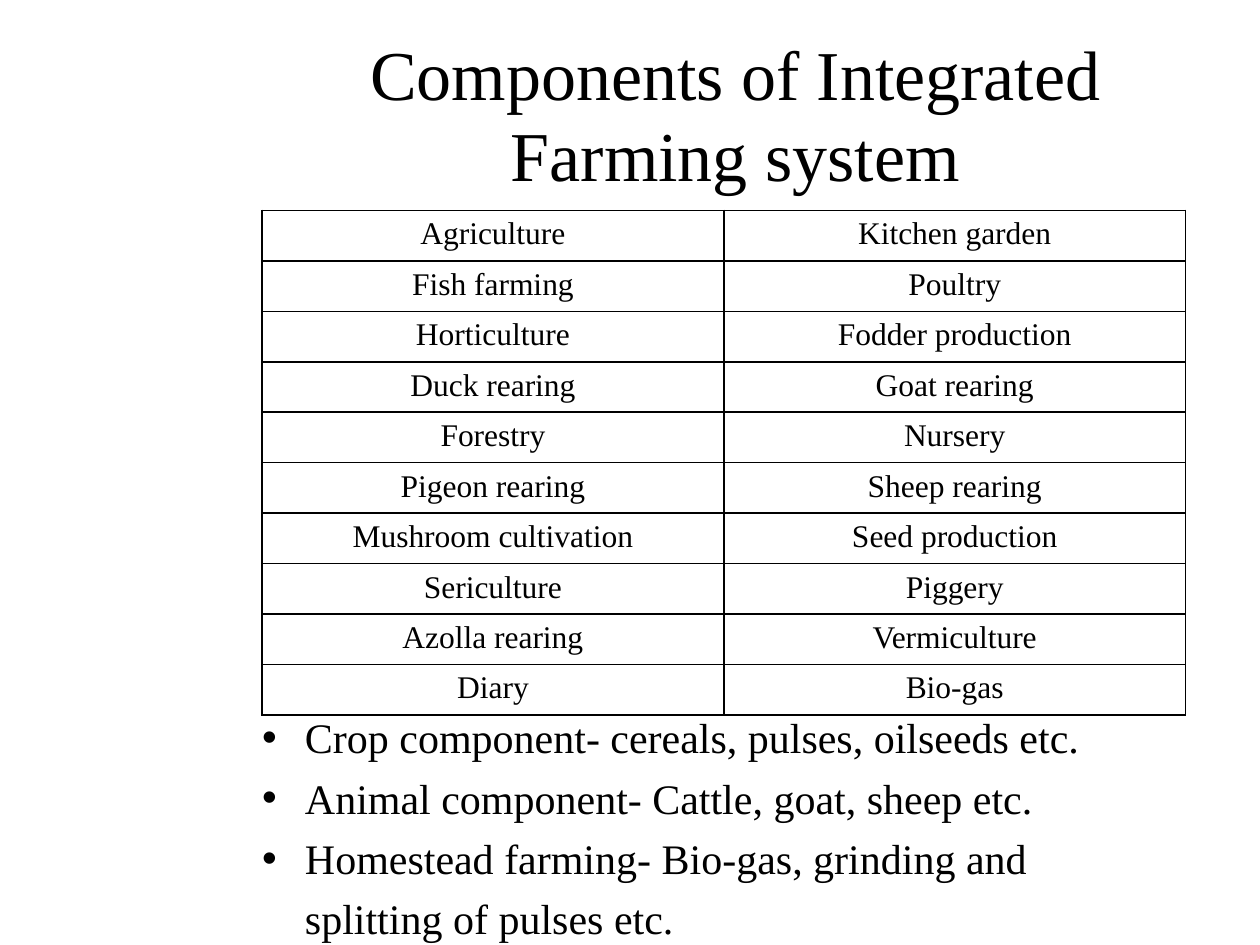
"""Build the slide on the components of an integrated farming system."""
from dataclasses import dataclass

from lxml import etree
from pptx import Presentation
from pptx import util as u
from pptx.dml.color import RGBColor
from pptx.enum import text
from pptx.oxml.ns import qn


@dataclass(frozen=True)
class Theme:
    font: str = "Times New Roman"
    bullet_font: str = "Arial"
    ink: str = "000000"
    paper: str = "FFFFFF"
    title_size: float = 40
    bullet_size: float = 24
    cell_size: float = 18
    bullet_pitch: float = 34.5
    border: float = 1


@dataclass(frozen=True)
class Area:
    left: float
    top: float
    width: float
    height: float

    def lengths(self) -> list:
        return [u.Inches(side) for side in (self.left, self.top, self.width, self.height)]


THEME = Theme()
TITLE = "Components of Integrated Farming system"
TITLE_AREA = Area(2.17, 0.3, 7.33, 1.25)
TABLE_AREA = Area(2.08, 1.67, 7.33, 3.7)
BULLET_AREA = Area(2.08, 5.57, 6.99, 1.92)
BULLET_INDENT = 0.34
COMPONENTS = [
    ("Agriculture", "Kitchen garden"),
    ("Fish farming", "Poultry"),
    ("Horticulture", "Fodder production"),
    ("Duck rearing", "Goat rearing"),
    ("Forestry", "Nursery"),
    ("Pigeon rearing", "Sheep rearing"),
    ("Mushroom cultivation", "Seed production"),
    ("Sericulture", "Piggery"),
    ("Azolla rearing", "Vermiculture"),
    ("Diary", "Bio-gas"),
]
BULLETS = [
    "Crop component- cereals, pulses, oilseeds etc.",
    "Animal component- Cattle, goat, sheep etc.",
    "Homestead farming- Bio-gas, grinding and splitting of pulses etc.",
]


def style(para, size: float, align=text.PP_ALIGN.CENTER) -> None:
    para.alignment = align
    for span in para.runs:
        span.font.name = THEME.font
        span.font.size = u.Pt(size)
        span.font.color.rgb = RGBColor.from_string(THEME.ink)


def add_box(page, area: Area, content: str):
    frame = page.shapes.add_textbox(*area.lengths()).text_frame
    frame.word_wrap = True
    frame.margin_left = frame.margin_top = frame.margin_right = frame.margin_bottom = 0
    frame.text = content
    return frame


def add_title(page) -> None:
    frame = add_box(page, TITLE_AREA, TITLE)
    frame.vertical_anchor = text.MSO_ANCHOR.MIDDLE
    frame.paragraphs[0].line_spacing = 0.97
    style(frame.paragraphs[0], THEME.title_size)


def set_bullet(para) -> None:
    props = para._p.get_or_add_pPr()
    props.set("marL", str(u.Inches(BULLET_INDENT)))
    props.set("indent", str(-u.Inches(BULLET_INDENT)))
    etree.SubElement(props, qn("a:buFont")).set("typeface", THEME.bullet_font)
    etree.SubElement(props, qn("a:buChar")).set("char", "•")


def add_bullets(page) -> None:
    frame = add_box(page, BULLET_AREA, "\n".join(BULLETS))
    for para in frame.paragraphs:
        set_bullet(para)
        para.line_spacing = u.Pt(THEME.bullet_pitch)
        style(para, THEME.bullet_size, text.PP_ALIGN.LEFT)


def set_borders(cell) -> None:
    props = cell._tc.get_or_add_tcPr()
    for position, side in enumerate(("lnL", "lnR", "lnT", "lnB")):
        line = etree.Element(qn(f"a:{side}"), w=str(u.Pt(THEME.border)))
        fill = etree.SubElement(line, qn("a:solidFill"))
        etree.SubElement(fill, qn("a:srgbClr")).set("val", THEME.ink)
        props.insert(position, line)


def add_components(page) -> None:
    table = page.shapes.add_table(
        len(COMPONENTS), len(COMPONENTS[0]), *TABLE_AREA.lengths()
    ).table
    table.first_row = table.horz_banding = False
    for row, names in zip(table.rows, COMPONENTS):
        for cell, name in zip(row.cells, names):
            cell.text = name
            cell.fill.solid()
            cell.fill.fore_color.rgb = RGBColor.from_string(THEME.paper)
            set_borders(cell)
            style(cell.text_frame.paragraphs[0], THEME.cell_size)


def main() -> None:
    deck = Presentation()
    deck.slide_width, deck.slide_height = u.Inches(10), u.Inches(7.5)
    page = deck.slides.add_slide(deck.slide_layouts[6])
    add_title(page)
    add_bullets(page)
    add_components(page)
    deck.save("out.pptx")


if __name__ == "__main__":
    main()
